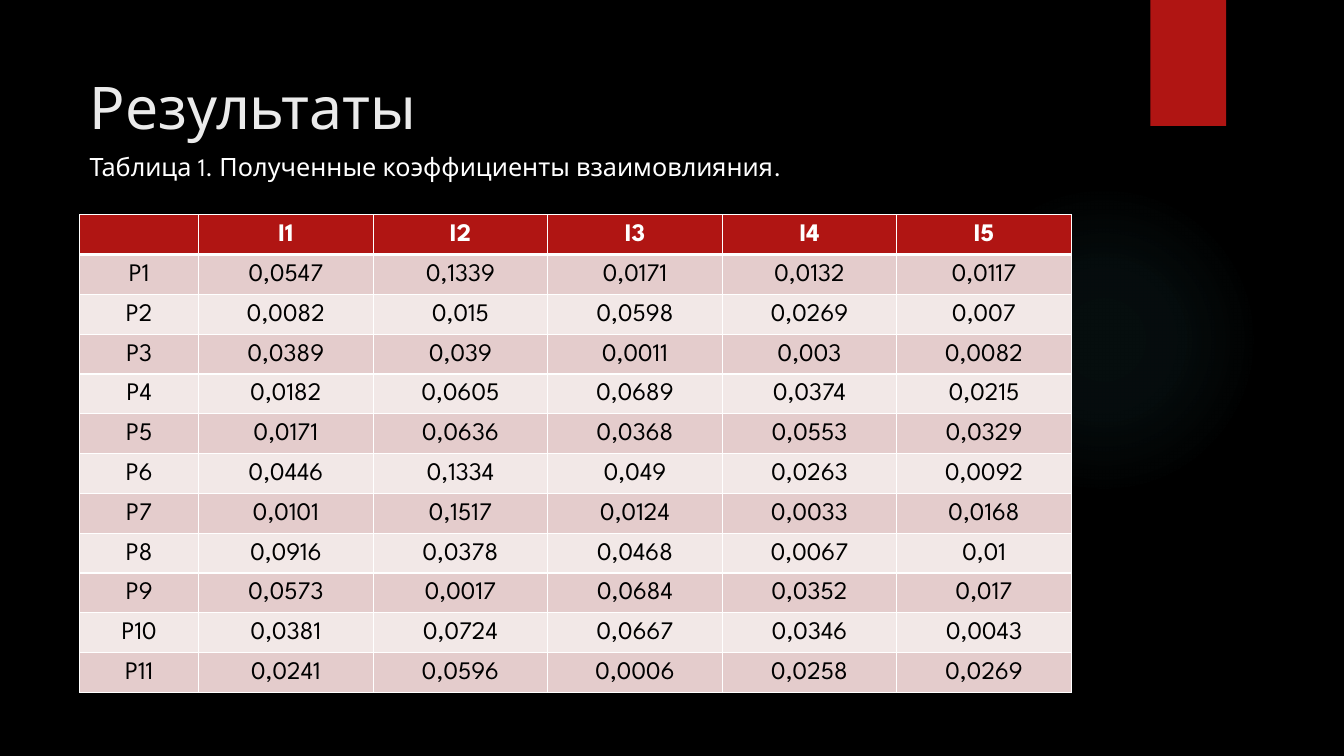
from dataclasses import dataclass

from lxml.etree import SubElement
from pptx import Presentation
from pptx.dml.color import RGBColor
from pptx.enum.shapes import MSO_SHAPE
from pptx.enum.text import MSO_ANCHOR, PP_ALIGN
from pptx.oxml import parse_xml
from pptx.oxml.ns import nsdecls, qn
from pptx.util import Emu, Inches, Pt


@dataclass(frozen=True)
class Theme:
    font: str = "League Spartan"
    background: str = "000000"
    accent: str = "B01513"
    glow: str = "50B9C1"
    title: str = "EBEBEB"
    light: str = "FFFFFF"
    dark: str = "000000"
    odd_row: str = "E4CCCC"
    even_row: str = "F2E8E7"
    title_size: int = 42
    body_size: int = 18
    thin_border: int = 1
    thick_border: int = 3


@dataclass(frozen=True)
class Area:
    """Position and size in percent of the slide."""
    left: float
    top: float
    width: float
    height: float

    def box(self) -> tuple:
        return (
            Emu(round(SLIDE_WIDTH * self.left / 100)),
            Emu(round(SLIDE_HEIGHT * self.top / 100)),
            Emu(round(SLIDE_WIDTH * self.width / 100)),
            Emu(round(SLIDE_HEIGHT * self.height / 100)),
        )


@dataclass(frozen=True)
class GlowStop:
    position: int
    opacity: int


@dataclass(frozen=True)
class ResultRow:
    name: str
    values: str

    def cells(self) -> list:
        return [self.name, *self.values.split()]


THEME = Theme()
SLIDE_WIDTH = Inches(13.33)
SLIDE_HEIGHT = Inches(7.5)
MARGIN = 5.93
GLOW_AREA = Area(70.59, 24.4, 23.1, 41.07)
RIBBON_AREA = Area(85.6, 0, 5.63, 16.67)
TITLE_AREA = Area(MARGIN, 0, 37.2, 19.33)
CAPTION_AREA = Area(MARGIN, 19.33, 72.4, 9.07)
TABLE_AREA = Area(MARGIN, 28.4, 73.8, 63.2)
NAME_COLUMN_SHARE = 0.12
GLOW_STOPS = [GlowStop(0, 7), GlowStop(36, 6), GlowStop(69, 0)]
RESULTS = [
    ResultRow("", "I1 I2 I3 I4 I5"),
    ResultRow("P1", "0,0547 0,1339 0,0171 0,0132 0,0117"),
    ResultRow("P2", "0,0082 0,015 0,0598 0,0269 0,007"),
    ResultRow("P3", "0,0389 0,039 0,0011 0,003 0,0082"),
    ResultRow("P4", "0,0182 0,0605 0,0689 0,0374 0,0215"),
    ResultRow("P5", "0,0171 0,0636 0,0368 0,0553 0,0329"),
    ResultRow("P6", "0,0446 0,1334 0,049 0,0263 0,0092"),
    ResultRow("P7", "0,0101 0,1517 0,0124 0,0033 0,0168"),
    ResultRow("P8", "0,0916 0,0378 0,0468 0,0067 0,01"),
    ResultRow("P9", "0,0573 0,0017 0,0684 0,0352 0,017"),
    ResultRow("P10", "0,0381 0,0724 0,0667 0,0346 0,0043"),
    ResultRow("P11", "0,0241 0,0596 0,0006 0,0258 0,0269"),
]


def write_text(frame, text: str, *, color: str, size: int = THEME.body_size,
               bold: bool = False, align=PP_ALIGN.LEFT, space_after: int = 0) -> None:
    paragraph = frame.paragraphs[0]
    paragraph.alignment = align
    paragraph.space_after = Pt(space_after)
    if text:
        run = paragraph.add_run()
        run.text = text
        run.font.name = THEME.font
        run.font.size = Pt(size)
        run.font.bold = bold
        run.font.color.rgb = RGBColor.from_string(color)


def add_text_box(slide, area: Area, text: str, *, anchor=MSO_ANCHOR.TOP, **text_format) -> None:
    frame = slide.shapes.add_textbox(*area.box()).text_frame
    frame.word_wrap = True
    frame.vertical_anchor = anchor
    write_text(frame, text, **text_format)


def add_plain_shape(slide, kind, area: Area):
    shape = slide.shapes.add_shape(kind, *area.box())
    shape.shadow.inherit = False
    shape.line.fill.background()
    return shape


def add_glow(slide) -> None:
    shape = add_plain_shape(slide, MSO_SHAPE.OVAL, GLOW_AREA)
    shape.fill.background()
    properties = shape._element.spPr
    stops = "".join(
        f'<a:gs pos="{stop.position * 1000}"><a:srgbClr val="{THEME.glow}">'
        f'<a:alpha val="{stop.opacity * 1000}"/></a:srgbClr></a:gs>'
        for stop in GLOW_STOPS
    )
    gradient = parse_xml(
        f'<a:gradFill {nsdecls("a")} rotWithShape="1"><a:gsLst>{stops}</a:gsLst>'
        '<a:path path="circle"><a:fillToRect l="50000" t="50000" r="50000" b="50000"/>'
        '</a:path></a:gradFill>'
    )
    properties.replace(properties.find(qn("a:noFill")), gradient)


def add_ribbon(slide) -> None:
    shape = add_plain_shape(slide, MSO_SHAPE.RECTANGLE, RIBBON_AREA)
    shape.fill.solid()
    shape.fill.fore_color.rgb = RGBColor.from_string(THEME.accent)
    shape._element.spPr.find(qn("a:effectLst")).append(parse_xml(
        f'<a:outerShdw {nsdecls("a")} blurRad="{Pt(3)}" dist="{Pt(2)}" dir="5400000">'
        f'<a:srgbClr val="{THEME.dark}"><a:alpha val="45000"/></a:srgbClr></a:outerShdw>'
    ))


def add_border(cell, side: str, width: int) -> None:
    line = SubElement(cell._tc.get_or_add_tcPr(), qn(f"a:{side}"), w=str(Pt(width)))
    fill = SubElement(line, qn("a:solidFill"))
    SubElement(fill, qn("a:srgbClr"), val=THEME.light)


def format_cell(cell, text: str, row_index: int) -> None:
    header = row_index == 0
    cell.margin_left = cell.margin_right = cell.margin_top = Inches(0.02)
    cell.margin_bottom = 0
    cell.vertical_anchor = MSO_ANCHOR.MIDDLE
    widths = {
        "lnL": THEME.thin_border,
        "lnR": THEME.thin_border,
        "lnT": THEME.thick_border if row_index == 1 else THEME.thin_border,
        "lnB": THEME.thick_border if header else THEME.thin_border,
    }
    for side, width in widths.items():
        add_border(cell, side, width)
    band = THEME.odd_row if row_index % 2 else THEME.even_row
    cell.fill.solid()
    cell.fill.fore_color.rgb = RGBColor.from_string(THEME.accent if header else band)
    write_text(cell.text_frame, text, color=THEME.light if header else THEME.dark,
               bold=header, align=PP_ALIGN.CENTER)


def add_results_table(slide) -> None:
    left, top, width, height = TABLE_AREA.box()
    column_count = len(RESULTS[0].cells())
    table = slide.shapes.add_table(len(RESULTS), column_count, left, top, width, height).table
    value_share = (1 - NAME_COLUMN_SHARE) / (column_count - 1)
    for index, column in enumerate(table.columns):
        column.width = Emu(round(width * (value_share if index else NAME_COLUMN_SHARE)))
    for row_index, result in enumerate(RESULTS):
        table.rows[row_index].height = Emu(height // len(RESULTS))
        for column_index, text in enumerate(result.cells()):
            format_cell(table.cell(row_index, column_index), text, row_index)


def main() -> None:
    presentation = Presentation()
    presentation.slide_width = SLIDE_WIDTH
    presentation.slide_height = SLIDE_HEIGHT
    slide = presentation.slides.add_slide(presentation.slide_layouts[6])
    slide.background.fill.solid()
    slide.background.fill.fore_color.rgb = RGBColor.from_string(THEME.background)
    add_glow(slide)
    add_ribbon(slide)
    add_text_box(slide, TITLE_AREA, "Результаты", anchor=MSO_ANCHOR.BOTTOM,
                 color=THEME.title, size=THEME.title_size)
    add_results_table(slide)
    add_text_box(slide, CAPTION_AREA, "Таблица 1. Полученные коэффициенты взаимовлияния.",
                 color=THEME.light, space_after=6)
    presentation.save("out.pptx")


if __name__ == "__main__":
    main()
